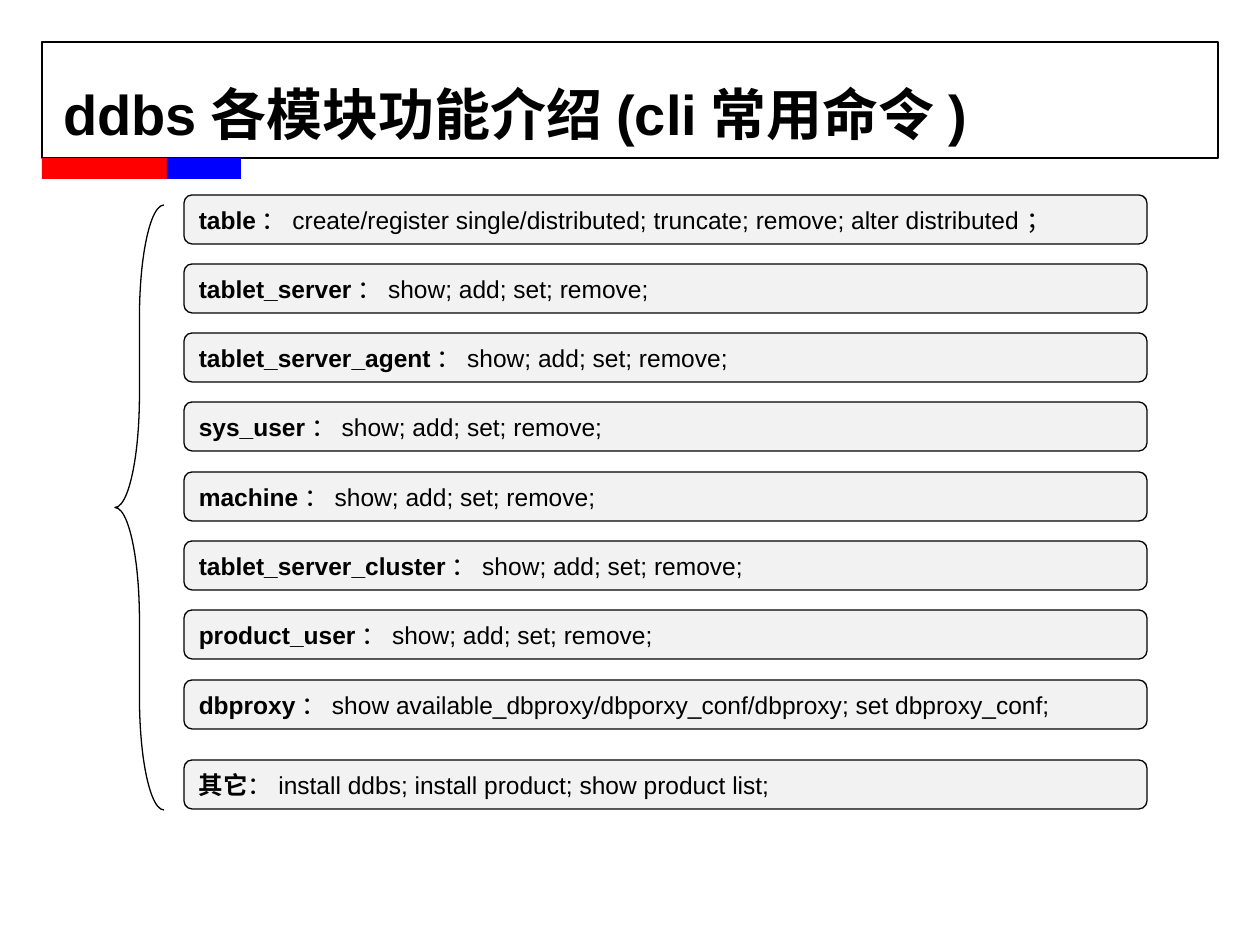
from pptx import Presentation
from pptx.dml.color import RGBColor
from pptx.enum.shapes import MSO_SHAPE
from pptx.enum.text import MSO_ANCHOR, PP_ALIGN
from pptx.util import Emu, Pt

RECTANGLE = MSO_SHAPE.RECTANGLE
ROUNDED = MSO_SHAPE.ROUNDED_RECTANGLE
BRACE = MSO_SHAPE.LEFT_BRACE
MIDDLE = MSO_ANCHOR.MIDDLE
LEFT = PP_ALIGN.LEFT

EMU_PER_PX = 914400 / 126
FONT = "Arial"
COLORS = {"ink": "000000", "red": "FF0000", "blue": "0000FF", "row": "F2F2F2"}

COMMON = "show; add; set; remove;"
COMMANDS = [
    ("table", "create/register single/distributed; truncate; remove; alter distributed；"),
    ("tablet_server", COMMON),
    ("tablet_server_agent", COMMON),
    ("sys_user", COMMON),
    ("machine", COMMON),
    ("tablet_server_cluster", COMMON),
    ("product_user", COMMON),
    ("dbproxy", "show available_dbproxy/dbporxy_conf/dbproxy; set dbproxy_conf;"),
]
OTHER = ("其它", "install ddbs; install product; show product list;")


def px(value):
    return Emu(round(value * EMU_PER_PX))


def color(name):
    return RGBColor.from_string(COLORS[name])


class SlideBuilder:
    def __init__(self, slide):
        self.slide = slide

    def style_font(self, font, size):
        font.name = FONT
        font.size = Pt(size)
        font.color.rgb = color("ink")

    def title(self, text, left, top, width, height):
        shape = self.slide.shapes.title
        shape.left, shape.top = px(left), px(top)
        shape.width, shape.height = px(width), px(height)
        frame = shape.text_frame
        frame.margin_left = frame.margin_right = 0
        frame.margin_top = frame.margin_bottom = 0
        frame.vertical_anchor = MIDDLE
        frame.text = text
        paragraph = frame.paragraphs[0]
        paragraph.alignment = LEFT
        paragraph.line_spacing = 0.93
        self.style_font(paragraph.font, 32)
        paragraph.font.bold = True

    def shape(self, kind, left, top, width, height, fill=None, outlined=True):
        shape = self.slide.shapes.add_shape(kind, px(left), px(top), px(width), px(height))
        shape.shadow.inherit = False
        if fill:
            shape.fill.solid()
            shape.fill.fore_color.rgb = color(fill)
        else:
            shape.fill.background()
        if outlined:
            shape.line.color.rgb = color("ink")
            shape.line.width = Pt(0.75)
        else:
            shape.line.fill.background()
        return shape

    def command_row(self, top, module, commands):
        frame = self.shape(ROUNDED, 184, top, 963, 49, "row").text_frame
        frame.word_wrap = True
        frame.vertical_anchor = MIDDLE
        paragraph = frame.paragraphs[0]
        paragraph.alignment = LEFT
        self.style_font(paragraph.font, 14)
        for text, bold in ((module, True), ("：" + commands, False)):
            run = paragraph.add_run()
            run.text = text
            run.font.bold = bold


def main():
    presentation = Presentation()
    presentation.slide_width, presentation.slide_height = px(1260), px(945)
    builder = SlideBuilder(presentation.slides.add_slide(presentation.slide_layouts[5]))

    # Title frame with its two accent bars
    builder.shape(RECTANGLE, 42, 42, 1176, 116)
    builder.shape(RECTANGLE, 42, 158, 149, 21, "red", outlined=False)
    builder.shape(RECTANGLE, 167, 158, 74, 21, "blue", outlined=False)
    builder.title("ddbs各模块功能介绍(cli常用命令)", 63, 38, 1134, 157)

    # Brace spanning all modules
    brace = builder.shape(BRACE, 115, 205, 49, 605)
    brace.adjustments[0] = 2.3

    # Module rows, evenly spaced, with the last one set apart
    for index, (module, commands) in enumerate(COMMANDS):
        builder.command_row(195 + index * 485 // 7, module, commands)
    builder.command_row(760, *OTHER)

    presentation.save("out.pptx")


if __name__ == "__main__":
    main()
